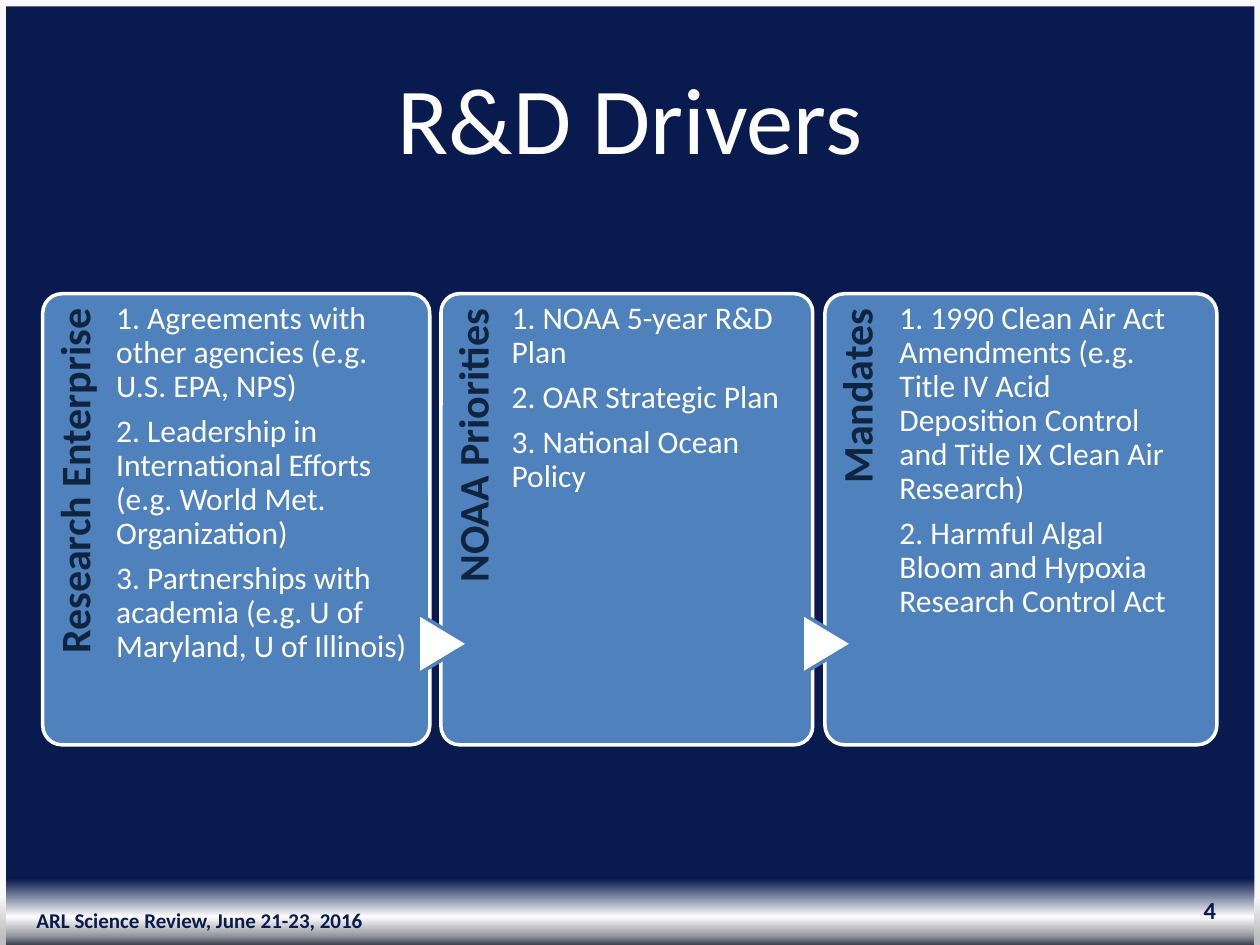
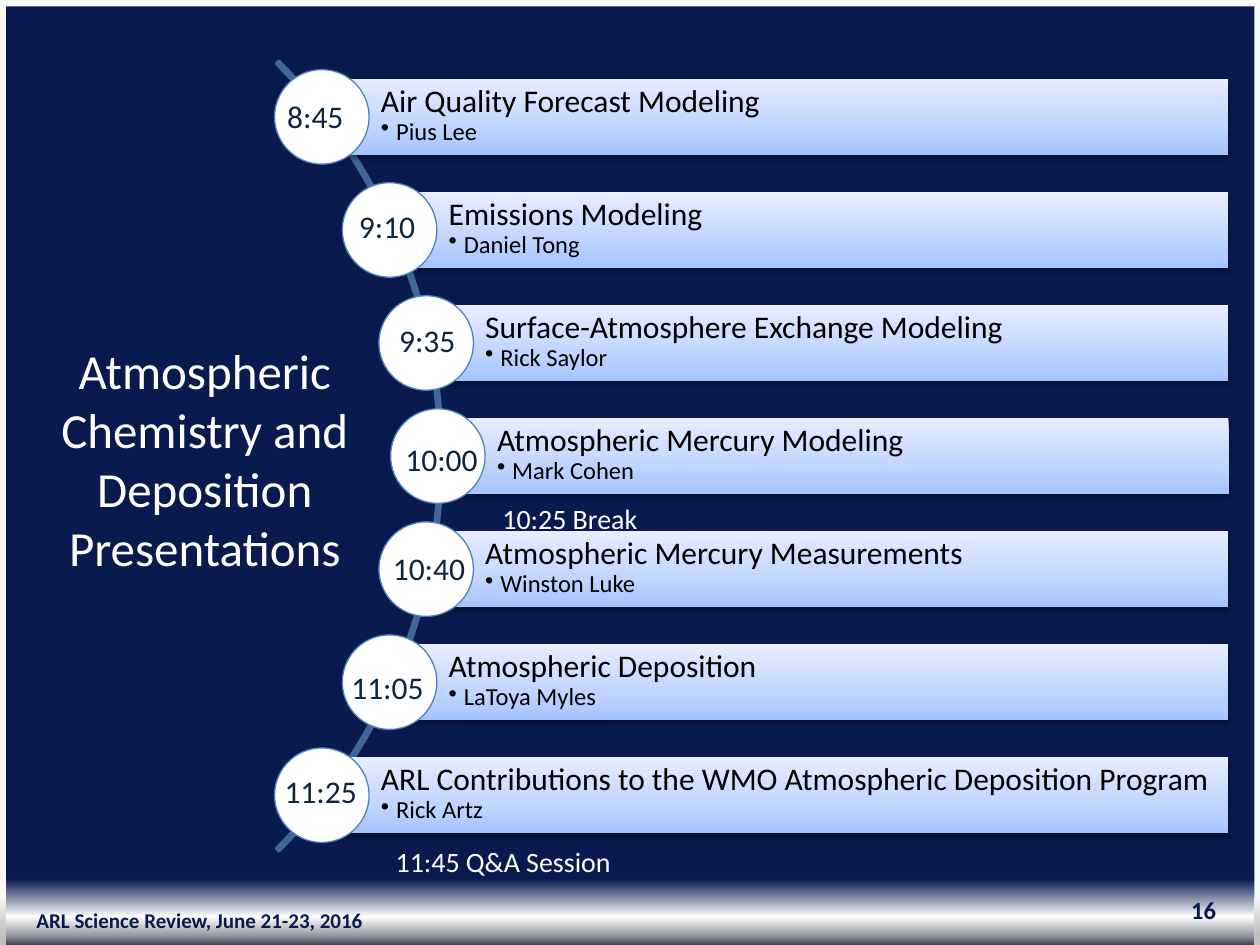
"""Build the two review slides: the drivers panels and the timed list of talks."""
import math

from lxml import etree
from pptx import Presentation
from pptx.dml.color import RGBColor
from pptx.enum.shapes import MSO_SHAPE
from pptx.enum.text import MSO_ANCHOR, PP_ALIGN
from pptx.oxml.ns import qn
from pptx.util import Pt

RECT, ROUND, OVAL = MSO_SHAPE.RECTANGLE, MSO_SHAPE.ROUNDED_RECTANGLE, MSO_SHAPE.OVAL
ARC, TRIANGLE = MSO_SHAPE.BLOCK_ARC, MSO_SHAPE.FLOWCHART_EXTRACT
TOP, MIDDLE = MSO_ANCHOR.TOP, MSO_ANCHOR.MIDDLE
LEFT, CENTER, RIGHT = PP_ALIGN.LEFT, PP_ALIGN.CENTER, PP_ALIGN.RIGHT

FONT = "Calibri"
WIDTH, HEIGHT = 720, 540
INSETS = (7.2, 3.6, 7.2, 3.6)
COLORS = {
    "navy": "091A4F", "white": "FFFFFF", "black": "000000", "ink": "0F243E",
    "blue": "4F81BD", "arc": "3F6797", "frame": "F8F8F8",
}
BACKDROP = [(93, "091A4F"), (97, "FEFEFE"), (99, "9799A0"), (100, "3C414E")]
FRAME_SIDE = [(0, "F8F8F8"), (95, "F5F5F5"), (99, "BFBFBF")]
BAR_FILL = [(0, "E6EEFF"), (65, "BFD4FF"), (100, "A4C4FF")]

PANELS = [
    (24.4, 221.2, "Research Enterprise", [
        "1. Agreements with other agencies (e.g. U.S. EPA, NPS)",
        "2. Leadership in International Efforts (e.g. World Met. Organization)",
        "3. Partnerships with academia (e.g. U of Maryland, U of Illinois)"]),
    (252, 212.4, "NOAA Priorities", [
        "1. NOAA 5-year R&D Plan",
        "2. OAR Strategic Plan",
        "3. National Ocean Policy"]),
    (471.4, 224, "Mandates", [
        "1. 1990 Clean Air Act Amendments (e.g. Title IV Acid Deposition Control "
        "and Title IX Clean Air Research)",
        "2. Harmful Algal Bloom and Hypoxia Research Control Act"]),
]

TALKS = [
    ("8:45", 157, 51.8, "Air Quality Forecast Modeling", "Pius Lee"),
    ("9:10", 198, 114.5, "Emissions Modeling", "Daniel Tong"),
    ("9:35", 221, 180, "Surface-Atmosphere Exchange Modeling", "Rick Saylor"),
    ("10:00", 224.6, 247.7, "Atmospheric Mercury Modeling", "Mark Cohen"),
    ("10:40", 217.4, 310.3, "Atmospheric Mercury Measurements", "Winston Luke"),
    ("11:05", 193.7, 378, "Atmospheric Deposition", "LaToya Myles"),
    ("11:25", 155.5, 437.8,
     "ARL Contributions to the WMO Atmospheric Deposition Program", "Rick Artz"),
]


def color(name):
    """Return the named palette colour."""
    return RGBColor.from_string(COLORS[name])


class Slides:
    """Hold the deck, its style and the current page."""

    def __init__(self):
        """Open an empty deck of the right size."""
        self.deck = Presentation()
        self.deck.slide_width, self.deck.slide_height = Pt(WIDTH), Pt(HEIGHT)
        self.page = None

    def gradient(self, fill, element, stops):
        """Fill an element from top to bottom with the given stops."""
        fill.gradient()
        fill.gradient_angle = 270
        stop_list = next(element.iter(qn("a:gsLst")))
        for stop in list(stop_list):
            stop_list.remove(stop)
        for position, value in stops:
            stop = etree.SubElement(stop_list, qn("a:gs"), pos=str(position * 1000))
            etree.SubElement(stop, qn("a:srgbClr"), val=value)

    def new_page(self, number, title, title_area, title_size):
        """Add a page with backdrop, frame, title and footer."""
        self.page = self.deck.slides.add_slide(self.deck.slide_layouts[6])
        self.gradient(self.page.background.fill, self.page.element, BACKDROP)
        self.shape(RECT, (0, 0, 3.6, HEIGHT), FRAME_SIDE)
        self.shape(RECT, (1.4, 0, WIDTH - 1.4, 3.6), "frame")
        self.shape(RECT, (WIDTH - 3.2, 0, 3.2, HEIGHT), FRAME_SIDE)
        self.text(title_area, [title], title_size, align=CENTER, anchor=MIDDLE)
        self.text((0, 511.2, 228.2, 28.8), ["ARL Science Review, June 21-23, 2016"],
                  12, "navy", True, CENTER, MIDDLE)
        self.text((534.2, 505.4, 167.8, 28.8), [number], 14, "navy", True, RIGHT, MIDDLE)

    def shape(self, kind, area, fill=None, line=None, weight=2, adjust=()):
        """Add a preset shape with a plain, gradient or empty fill."""
        shape = self.page.shapes.add_shape(kind, *map(Pt, area))
        shape.shadow.inherit = False
        for index, value in enumerate(adjust):
            shape.adjustments[index] = value
        if fill is None:
            shape.fill.background()
        elif isinstance(fill, str):
            shape.fill.solid()
            shape.fill.fore_color.rgb = color(fill)
        else:
            self.gradient(shape.fill, shape.element, fill)
        if line:
            shape.line.color.rgb = color(line)
            shape.line.width = Pt(weight)
        else:
            shape.line.fill.background()
        return shape

    def drop_shadow(self, shape):
        """Give a shape a soft shadow below it."""
        effects = next(shape.element.iter(qn("a:effectLst")))
        shadow = etree.SubElement(
            effects, qn("a:outerShdw"), blurRad=str(Pt(3.1)), dist=str(Pt(1.6)),
            dir="5400000", rotWithShape="0")
        tint = etree.SubElement(shadow, qn("a:srgbClr"), val=COLORS["black"])
        etree.SubElement(tint, qn("a:alpha"), val="38000")

    def fill_text(self, frame, lines, size, ink, bold=False, align=LEFT, anchor=TOP,
                  insets=INSETS, spacing=None, after=None, wrap=True):
        """Set and format the text of a frame."""
        frame.text = "\n".join(lines)
        frame.word_wrap = wrap
        frame.vertical_anchor = anchor
        (frame.margin_left, frame.margin_top,
         frame.margin_right, frame.margin_bottom) = map(Pt, insets)
        for para in frame.paragraphs:
            para.alignment = align
            para.line_spacing = spacing
            para.space_after = after
            for span in para.runs:
                span.font.name = FONT
                span.font.size = Pt(size)
                span.font.bold = bold
                span.font.color.rgb = color(ink)

    def text(self, area, lines, size, ink="white", *options, **settings):
        """Add a text box."""
        box = self.page.shapes.add_textbox(*map(Pt, area))
        self.fill_text(box.text_frame, lines, size, ink, *options, **settings)
        return box

    def bullet(self, para, size):
        """Turn a paragraph into a small bulleted line."""
        para.level = 1
        properties = para._p.get_or_add_pPr()
        properties.set("marL", str(Pt(8.64)))
        properties.set("indent", str(-Pt(8.64)))
        etree.SubElement(properties, qn("a:buChar"), char="•")
        for span in para.runs:
            span.font.size = Pt(size)

    def panel(self, left, width, heading, points, arrow):
        """Add a driver panel with its upright heading and an optional arrow."""
        top, height = 167.8, 257.8
        self.shape(ROUND, (left, top, width, height), "blue", "white", adjust=[0.05])
        length, depth = 211.7, 0.2 * width
        label = self.text(
            (left + 0.1 * width - length / 2, top + length / 2 - depth / 2, length, depth),
            [heading], 24, "ink", True, RIGHT, insets=(0, 6.5, 8.6, 0), spacing=0.9)
        label.rotation = 270
        if arrow:
            pointer = self.shape(TRIANGLE, (left - 15.9, 353.5, 34.6, 28.8), "white", "blue")
            pointer.rotation = 90
        self.text((left + 0.19 * width, top, 0.75 * width, height), points, 18,
                  insets=(0, 5, 0, 0), spacing=0.9, after=Pt(6.3))

    def talk(self, center_x, center_y, title, speaker):
        """Add a talk bar with the round marker at its left end."""
        bar = self.shape(RECT, (center_x, center_y - 21.6, 702 - center_x, 43.2), BAR_FILL)
        self.drop_shadow(bar)
        self.fill_text(bar.text_frame, [title, speaker], 18, "black",
                       insets=(33.8, 3.6, 3.6, 3.6), spacing=0.9)
        self.bullet(bar.text_frame.paragraphs[1], 14)
        self.shape(OVAL, (center_x - 27, center_y - 27, 54, 54), "white", "blue", 0.75)


def main():
    """Build both pages and save the deck."""
    slides = Slides()

    slides.new_page("4", "R&D Drivers", (36, 21.6, 648, 90), 54)
    for index, (left, width, heading, points) in enumerate(PANELS):
        slides.panel(left, width, heading, points, arrow=index > 0)

    slides.new_page("16", "Atmospheric Chemistry and Deposition\vPresentations",
                    (0, 172, 234, 180), 28)
    hub_x, hub_y, arc_radius, marker_radius, pitch = -66.2, 260.6, 319, 316.4, 64.6
    slides.shape(ARC, (hub_x - arc_radius, hub_y - arc_radius, 2 * arc_radius, 2 * arc_radius),
                 line="arc", adjust=[189, 27, 0.003])
    for index, (_, _, _, title, speaker) in enumerate(TALKS):
        offset = (index - len(TALKS) // 2) * pitch
        reach = math.sqrt(marker_radius ** 2 - offset ** 2)
        slides.talk(hub_x + reach, hub_y + offset, title, speaker)
    for time, left, top, _, _ in TALKS:
        width = 46.8 if len(time) == 4 else 56.2
        slides.text((left, top, width, 28.8), [time], 18, "ink", wrap=False)
    for left, top, note in [(280, 283, "10:25 Break"), (219, 478.8, "11:45 Q&A Session")]:
        slides.text((left, top, 149.8, 26.6), [note], 16)

    slides.deck.save("out.pptx")


if __name__ == "__main__":
    main()
